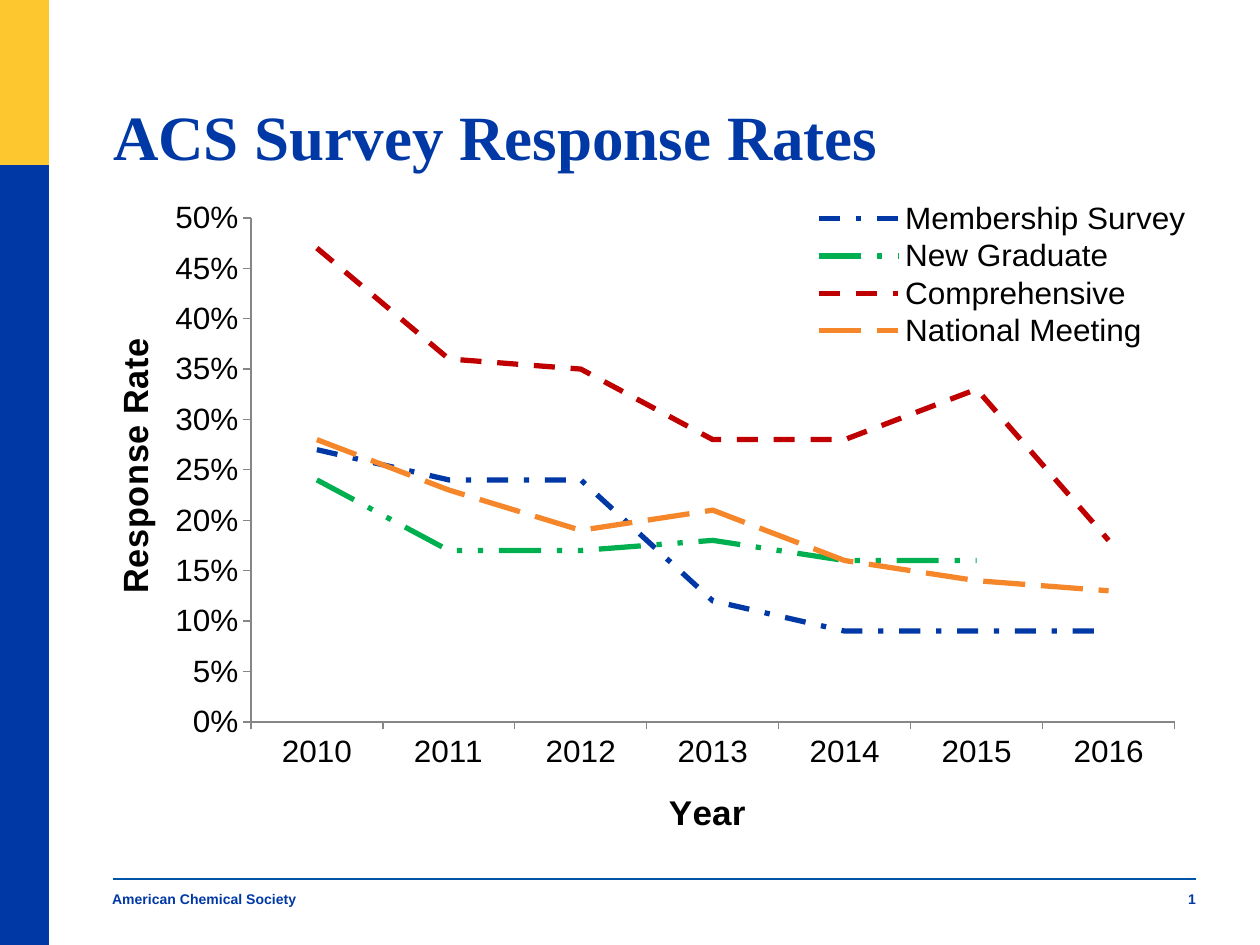
from dataclasses import dataclass

from lxml import etree
from pptx import Presentation
from pptx import util as u
from pptx.chart.data import CategoryChartData
from pptx.dml.color import RGBColor
from pptx.enum import chart as ch, dml, shapes, text
from pptx.oxml.ns import qn

PX_PER_INCH = 126


@dataclass(frozen=True)
class Theme:
    blue: str = "0039A6"
    gold: str = "FDC82F"
    rule: str = "0054A6"
    ink: str = "000000"
    axis: str = "868686"
    green: str = "00B050"
    red: str = "C00000"
    orange: str = "F6862A"
    serif: str = "Times New Roman"
    sans: str = "Arial"
    title_size: int = 36
    axis_title_size: int = 20
    chart_size: int = 18
    footer_size: int = 8


THEME = Theme()
YEARS = [str(year) for year in range(2010, 2017)]
DASH = dml.MSO_LINE
SURVEYS = [
    ("Membership Survey", THEME.blue, DASH.DASH_DOT,
     (0.27, 0.24, 0.24, 0.12, 0.09, 0.09, 0.09)),
    ("New Graduate", THEME.green, DASH.DASH_DOT_DOT,
     (0.24, 0.17, 0.17, 0.18, 0.16, 0.16, None)),
    ("Comprehensive", THEME.red, DASH.DASH,
     (0.47, 0.36, 0.35, 0.28, 0.28, 0.33, 0.18)),
    ("National Meeting", THEME.orange, DASH.LONG_DASH,
     (0.28, 0.23, 0.19, 0.21, 0.16, 0.14, 0.13)),
]


def px(length):
    return u.Emu(round(length * 914400 / PX_PER_INCH))


def rgb(colour):
    return RGBColor.from_string(colour)


def style_font(font, face, size, colour, bold):
    font.name, font.size, font.bold = face, u.Pt(size), bold
    font.color.rgb = rgb(colour)


def clear_margins(frame):
    frame.word_wrap = True
    frame.margin_left = frame.margin_top = frame.margin_right = frame.margin_bottom = 0


def add_band(slide, left, top, width, height, colour):
    band = slide.shapes.add_shape(
        shapes.MSO_SHAPE.RECTANGLE, px(left), px(top), px(width), px(height))
    band.shadow.inherit = False
    band.fill.solid()
    band.fill.fore_color.rgb = rgb(colour)
    band.line.fill.background()


def add_side_bar(slide, left, top, width, height):
    add_band(slide, left, top, width, height, THEME.blue)
    add_band(slide, left, top, width, 165, THEME.gold)


def add_title(slide, left, top, width, height):
    heading = slide.shapes.title
    heading.left, heading.top = px(left), px(top)
    heading.width, heading.height = px(width), px(height)
    frame = heading.text_frame
    clear_margins(frame)
    frame.auto_size = text.MSO_AUTO_SIZE.NONE
    frame.vertical_anchor = text.MSO_ANCHOR.BOTTOM
    paragraph = frame.paragraphs[0]
    paragraph.alignment = text.PP_ALIGN.LEFT
    paragraph.line_spacing = 0.9
    run = paragraph.add_run()
    run.text = "ACS Survey Response Rates"
    style_font(run.font, THEME.serif, THEME.title_size, THEME.blue, True)


def add_footer(slide, left, top, width, height):
    rule = slide.shapes.add_connector(
        shapes.MSO_CONNECTOR.STRAIGHT, px(left), px(top), px(left + width), px(top))
    rule.line.color.rgb = rgb(THEME.rule)
    rule.line.width = u.Pt(0.75)
    etree.SubElement(rule._element.spPr, qn("a:effectLst"))

    number_width = 244
    notes = [
        ("American Chemical Society", left - 1, 400, text.PP_ALIGN.LEFT),
        ("1", left + width - number_width, number_width, text.PP_ALIGN.RIGHT),
    ]
    for words, note_left, note_width, alignment in notes:
        note = slide.shapes.add_textbox(
            px(note_left), px(top + 12), px(note_width), px(height - 12))
        clear_margins(note.text_frame)
        paragraph = note.text_frame.paragraphs[0]
        paragraph.alignment = alignment
        run = paragraph.add_run()
        run.text = words
        style_font(run.font, THEME.sans, THEME.footer_size, THEME.blue, True)


def set_layout(element, index, inner=False, **fractions):
    """Place a chart part by fractions of the chart area."""
    for old in element.findall(qn("c:layout")):
        element.remove(old)
    layout = etree.Element(qn("c:layout"))
    manual = etree.SubElement(layout, qn("c:manualLayout"))
    if inner:
        etree.SubElement(manual, qn("c:layoutTarget"), val="inner")
    for key in ("x", "y"):
        etree.SubElement(manual, qn(f"c:{key}Mode"), val="edge")
    for key, value in fractions.items():
        etree.SubElement(manual, qn(f"c:{key}"), val=str(value))
    element.insert(index, layout)


def style_axis(axis, title, x, y):
    axis.has_major_gridlines = False
    axis.major_tick_mark = ch.XL_TICK_MARK.OUTSIDE
    axis.minor_tick_mark = ch.XL_TICK_MARK.NONE
    axis.format.line.color.rgb = rgb(THEME.axis)
    axis.format.line.width = u.Pt(0.75)
    style_font(axis.tick_labels.font, THEME.sans, THEME.chart_size, THEME.ink, False)
    run = axis.axis_title.text_frame.paragraphs[0].add_run()
    run.text = title
    style_font(run.font, THEME.sans, THEME.axis_title_size, THEME.ink, True)
    set_layout(axis.axis_title._element, 1, x=x, y=y)


def add_response_chart(slide, left, top, width, height):
    rates = CategoryChartData(number_format="0%")
    rates.categories = YEARS
    for name, _, _, values in SURVEYS:
        rates.add_series(name, values)
    chart = slide.shapes.add_chart(
        ch.XL_CHART_TYPE.LINE, px(left), px(top), px(width), px(height), rates).chart
    chart.has_title = False
    style_font(chart.font, THEME.sans, THEME.chart_size, THEME.ink, False)

    plot = chart.plots[0]
    plot.vary_by_categories = False
    for series, (_, colour, dash, _) in zip(plot.series, SURVEYS):
        series.smooth = False
        series.marker.style = ch.XL_MARKER_STYLE.NONE
        series.format.line.color.rgb = rgb(colour)
        series.format.line.width = u.Pt(3)
        series.format.line.dash_style = dash

    style_axis(chart.category_axis, "Year", 0.52, 0.93)
    rate_axis = chart.value_axis
    style_axis(rate_axis, "Response Rate", 0.02, 0.22)
    rate_axis.axis_title._element.find(".//" + qn("a:bodyPr")).set("rot", "-5400000")
    rate_axis.minimum_scale, rate_axis.maximum_scale = 0, 0.5
    rate_axis.major_unit = 0.05
    rate_axis.tick_labels.number_format = "0%"
    rate_axis.tick_labels.number_format_is_linked = False

    chart.has_legend = True
    chart.legend.position = ch.XL_LEGEND_POSITION.RIGHT
    chart.legend.include_in_layout = False
    style_font(chart.legend.font, THEME.sans, THEME.chart_size, THEME.ink, False)
    set_layout(chart.legend._element, 1, x=0.65, y=0, w=0.35, h=0.24)
    plot_area = chart._chartSpace.find(".//" + qn("c:plotArea"))
    set_layout(plot_area, 0, inner=True, x=0.15, y=0.03, w=0.83, h=0.8)


def main():
    deck = Presentation()
    deck.slide_width, deck.slide_height = px(1260), px(945)
    slide = deck.slides.add_slide(deck.slide_layouts[5])
    add_side_bar(slide, 0, 0, 49, 945)
    add_footer(slide, 113, 879, 1083, 52)
    add_title(slide, 113, 44, 774, 130)
    add_response_chart(slide, 84, 199, 1113, 645)
    deck.save("out.pptx")


if __name__ == "__main__":
    main()
